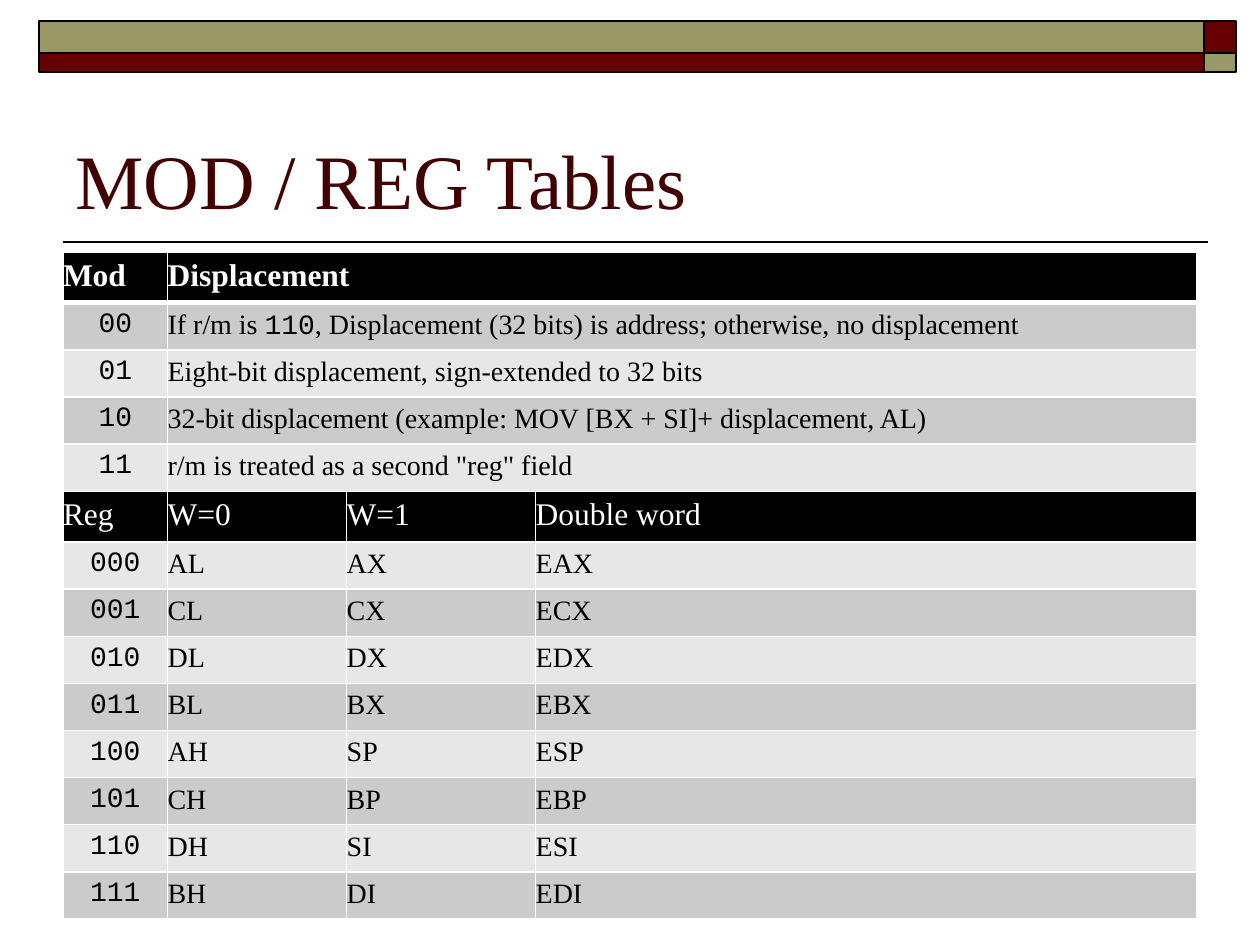
"""Build a slide with the MOD and REG encoding tables."""
from dataclasses import dataclass

import lxml.etree
import pptx
import pptx.dml.color
import pptx.enum.shapes
import pptx.enum.text
import pptx.oxml.ns
import pptx.util

Cm = pptx.util.Cm
Pt = pptx.util.Pt
qn = pptx.oxml.ns.qn
SERIF, MONO = "Times New Roman", "Courier New"
BLACK, WHITE, RED, OLIVE = "000000", "FFFFFF", "660000", "999966"
BANDS = ("E7E7E7", "CBCBCB")
BAR_LEFT, BAR_SPLIT, BAR_TOP, BAR_MID = 0.79, 24.28, 0.43, 1.07
COL_WIDTHS = (2.11, 3.61, 3.81, 13.33)
HEAD_HEIGHT, ROW_HEIGHT = 1.02, 0.95


@dataclass
class Bar:
    left: float
    top: float
    width: float
    height: float
    fill: str


@dataclass
class Row:
    cells: tuple[str, ...]
    head: bool = False
    bold: bool = False


BARS = [
    Bar(BAR_SPLIT, BAR_TOP, 0.64, 0.64, RED),
    Bar(BAR_LEFT, BAR_TOP, 23.49, 0.64, OLIVE),
    Bar(BAR_LEFT, BAR_MID, 23.49, 0.38, RED),
    Bar(BAR_SPLIT, BAR_MID, 0.64, 0.38, OLIVE),
]
MODES = (
    "If r/m is `110`, Displacement (32 bits) is address; otherwise, no displacement",
    "Eight-bit displacement, sign-extended to 32 bits",
    "32-bit displacement (example: MOV [BX + SI]+ displacement, AL)",
    'r/m is treated as a second "reg" field',
)
REGISTERS = (("AL", "AX"), ("CL", "CX"), ("DL", "DX"), ("BL", "BX"),
             ("AH", "SP"), ("CH", "BP"), ("DH", "SI"), ("BH", "DI"))
ROWS = [
    Row(("Mod", "Displacement"), head=True, bold=True),
    *(Row((f"`{i:02b}`", text)) for i, text in enumerate(MODES)),
    Row(("Reg", "W=0", "W=1", "Double word"), head=True),
    *(Row((f"`{i:03b}`", low, word, "E" + word)) for i, (low, word) in enumerate(REGISTERS)),
]


def rgb(value: str) -> pptx.dml.color.RGBColor:
    return pptx.dml.color.RGBColor.from_string(value)


def set_attrs(obj, values: dict) -> None:
    for name, value in values.items():
        setattr(obj, name, value)


def add_run(p, text: str, color: str, **font) -> None:
    r = p.add_run()
    r.text = text
    set_attrs(r.font, font)
    r.font.color.rgb = rgb(color)


def add_bar(s, bar: Bar) -> None:
    sp = s.shapes.add_shape(pptx.enum.shapes.MSO_SHAPE.RECTANGLE,
                            Cm(bar.left), Cm(bar.top), Cm(bar.width), Cm(bar.height))
    sp.shadow.inherit = False
    sp.fill.solid()
    sp.fill.fore_color.rgb = rgb(bar.fill)
    sp.line.color.rgb = rgb(BLACK)
    sp.line.width = Pt(1)


def add_rule(s) -> None:
    sp = s.shapes.add_connector(pptx.enum.shapes.MSO_CONNECTOR.STRAIGHT,
                                Cm(24.36), Cm(4.88), Cm(1.27), Cm(4.88))
    sp.line.color.rgb = rgb(BLACK)
    sp.line.width = Pt(1)
    lxml.etree.SubElement(sp._element.spPr, qn("a:effectLst"))


def add_title(s, text: str) -> None:
    sp = s.shapes.add_textbox(Cm(1.27), Cm(1.47), Cm(22.86), Cm(3.18))
    tf = sp.text_frame
    set_attrs(tf, {"word_wrap": True, "vertical_anchor": pptx.enum.text.MSO_ANCHOR.BOTTOM})
    add_run(tf.paragraphs[0], text, "420000", name=SERIF, size=Pt(44))


def set_borders(cell, widths: dict[str, int]) -> None:
    tcPr = cell._tc.get_or_add_tcPr()
    for side, width in widths.items():
        ln = lxml.etree.SubElement(tcPr, qn(f"a:ln{side}"), w=str(Pt(width)))
        fill = lxml.etree.SubElement(ln, qn("a:solidFill"))
        lxml.etree.SubElement(fill, qn("a:srgbClr"), val=WHITE)


def fill_cell(cell, text: str, row: Row) -> None:
    p = cell.text_frame.paragraphs[0]
    if text.startswith("`"):
        p.alignment = pptx.enum.text.PP_ALIGN.CENTER
    for i, part in enumerate(text.split("`")):
        if part:
            add_run(p, part, WHITE if row.head else BLACK, name=MONO if i % 2 else SERIF,
                    size=Pt(18 if row.head else 16), bold=row.bold)


def add_table(s, rows: list[Row]) -> None:
    heights = [HEAD_HEIGHT if row.head else ROW_HEIGHT for row in rows]
    table = s.shapes.add_table(len(rows), len(COL_WIDTHS), Cm(1.27), Cm(5.08),
                               Cm(sum(COL_WIDTHS)), Cm(sum(heights))).table
    set_attrs(table, {"first_row": False, "horz_banding": False})
    for column, width in zip(table.columns, COL_WIDTHS):
        column.width = Cm(width)
    for i, row in enumerate(rows):
        table.rows[i].height = Cm(heights[i])
        borders = {"L": 1, "R": 1, "T": 3 if i == 1 else 1, "B": 3 if i == 0 else 1}
        for cell in table.rows[i].cells:
            set_attrs(cell, {"margin_left": 0, "margin_right": 0,
                             "margin_top": Cm(0.13), "margin_bottom": Cm(0.13)})
            set_borders(cell, borders)
            cell.fill.solid()
            cell.fill.fore_color.rgb = rgb(BLACK if row.head else BANDS[i % 2])
        if len(row.cells) == 2:
            table.cell(i, 1).merge(table.cell(i, 3))
        for j, text in enumerate(row.cells):
            fill_cell(table.cell(i, j), text, row)


def main() -> None:
    prs = pptx.Presentation()
    set_attrs(prs, {"slide_width": Cm(25.4), "slide_height": Cm(19.05)})
    s = prs.slides.add_slide(prs.slide_layouts[6])
    add_rule(s)
    for bar in BARS:
        add_bar(s, bar)
    add_title(s, "MOD / REG Tables")
    add_table(s, ROWS)
    prs.save("out.pptx")


if __name__ == "__main__":
    main()
